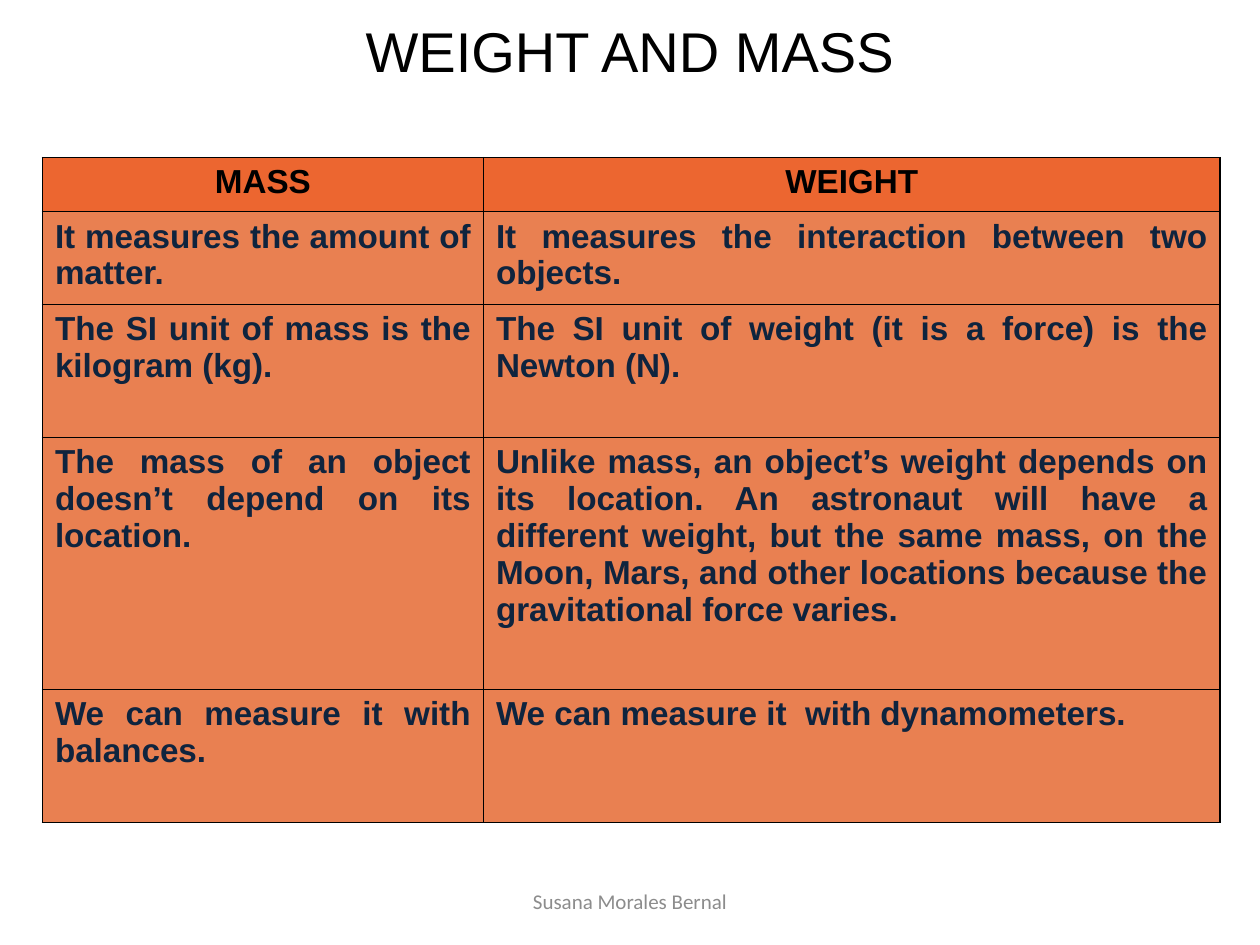
from lxml.etree import SubElement
from pptx import Presentation
from pptx.dml.color import RGBColor
from pptx.enum.text import MSO_ANCHOR, PP_ALIGN
from pptx.oxml.ns import qn
from pptx.util import Pt

BLACK = RGBColor(0x00, 0x00, 0x00)
NAVY = RGBColor(0x0F, 0x24, 0x3E)
GREY = RGBColor(0x8C, 0x8C, 0x8C)
HEADER_ORANGE = RGBColor(0xEC, 0x66, 0x30)
BODY_ORANGE = RGBColor(0xE9, 0x80, 0x51)

TITLE = "WEIGHT AND MASS"
FOOTER = "Susana Morales Bernal"
COMPARISON = [
    ("MASS", "WEIGHT"),
    ("It measures the amount of matter. ",
     "It measures the interaction between two objects."),
    ("The SI unit of mass is the kilogram (kg). ",
     "The SI unit of weight (it is a force) is the Newton (N). "),
    ("The mass of an object doesn’t depend on its location.",
     "Unlike mass, an object’s weight depends on its location. An astronaut "
     "will have a different weight, but the same mass, on the Moon, Mars, and "
     "other locations because the gravitational force varies."),
    ("We can measure it with balances.",
     "We can measure it  with dynamometers."),
]
COLUMN_WIDTHS = (252, 421)
ROW_HEIGHTS = (31, 53, 76, 144, 76)
TABLE_LEFT, TABLE_TOP = 24.25, 90


def write(frame, text, size, font, color, align, bold=False):
    frame.word_wrap = True
    para = frame.paragraphs[0]
    para.alignment = align
    span = para.add_run()
    span.text = text
    span.font.size = Pt(size)
    span.font.name = font
    span.font.bold = bold
    span.font.color.rgb = color


def add_label(page, place, text, size, font, color, anchor):
    box = page.shapes.add_textbox(*(Pt(length) for length in place))
    box.text_frame.vertical_anchor = anchor
    write(box.text_frame, text, size, font, color, PP_ALIGN.CENTER)


def outline(cell, color, width):
    """Draw a solid border on all four sides; call before filling the cell."""
    properties = cell._tc.get_or_add_tcPr()
    for side in ("a:lnL", "a:lnR", "a:lnT", "a:lnB"):
        line = SubElement(properties, qn(side), w=str(Pt(width)))
        fill = SubElement(line, qn("a:solidFill"))
        SubElement(fill, qn("a:srgbClr"), val=str(color))


def add_comparison(page):
    table = page.shapes.add_table(
        len(ROW_HEIGHTS), len(COLUMN_WIDTHS), Pt(TABLE_LEFT), Pt(TABLE_TOP),
        Pt(sum(COLUMN_WIDTHS)), Pt(sum(ROW_HEIGHTS))).table
    for column, width in zip(table.columns, COLUMN_WIDTHS):
        column.width = Pt(width)
    for row, height in zip(table.rows, ROW_HEIGHTS):
        row.height = Pt(height)
    for r, texts in enumerate(COMPARISON):
        header = r == 0
        for c, text in enumerate(texts):
            cell = table.cell(r, c)
            outline(cell, BLACK, 1)
            cell.fill.solid()
            cell.fill.fore_color.rgb = HEADER_ORANGE if header else BODY_ORANGE
            write(cell.text_frame, text, 19, "Arial",
                  BLACK if header else NAVY,
                  PP_ALIGN.CENTER if header else PP_ALIGN.JUSTIFY, bold=True)


def main():
    deck = Presentation()
    deck.slide_width, deck.slide_height = Pt(720), Pt(540)
    page = deck.slides.add_slide(deck.slide_layouts[6])
    add_label(page, (0, 6, 720, 46), TITLE, 32, "Arial", BLACK, MSO_ANCHOR.TOP)
    add_comparison(page)
    add_label(page, (246, 500.5, 228, 28.75), FOOTER, 12, "Calibri", GREY,
              MSO_ANCHOR.MIDDLE)
    deck.save("out.pptx")


if __name__ == "__main__":
    main()
